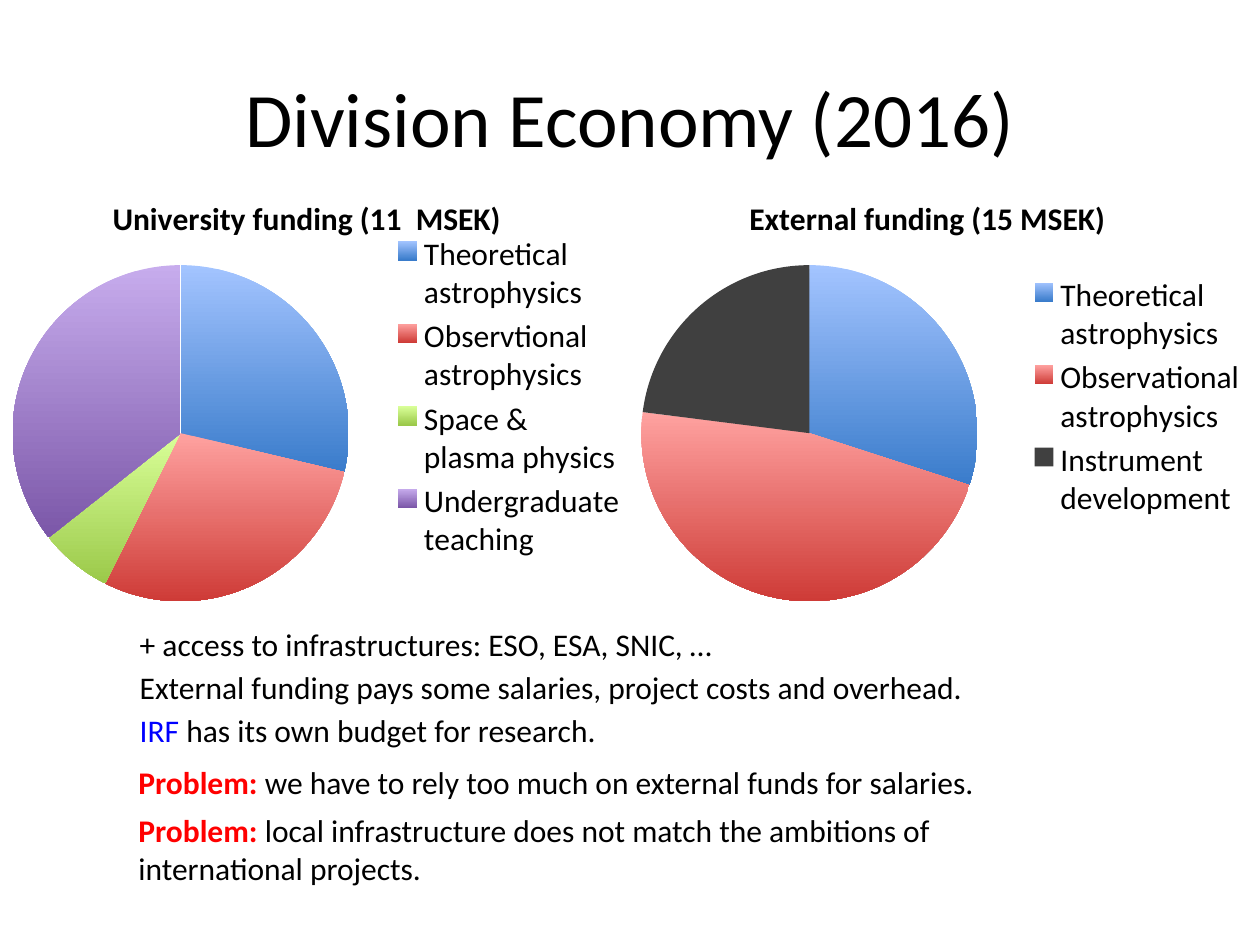
from pptx import Presentation
from pptx.chart.data import CategoryChartData
from pptx.dml.color import RGBColor
from pptx.enum.chart import XL_CHART_TYPE, XL_LEGEND_POSITION
from pptx.enum.text import MSO_ANCHOR, PP_ALIGN
from pptx.util import Inches, Pt

PIE = XL_CHART_TYPE.PIE
RIGHT = XL_LEGEND_POSITION.RIGHT
MIDDLE = MSO_ANCHOR.MIDDLE
CENTER = PP_ALIGN.CENTER

FONT = "Calibri"
BODY_SIZE = 18
COLORS = {"text": "000000", "link": "0000FF", "alert": "FF0000"}
# Each slice runs from a light top to a dark bottom
SLICES = {
    "blue": ("A3C4FF", "3A7CCB"),
    "red": ("FFA2A0", "CE3B37"),
    "green": ("D9FF98", "9BC94A"),
    "purple": ("C7ACED", "7B57A8"),
    "gray": ("404040", "404040"),
}

# Content
TITLE = "Division Economy (2016)"
CHARTS = [
    {"title": "University funding (11  MSEK)", "left": -0.21, "width": 5.29,
     "shares": [("Theoretical astrophysics", 29, "blue"),
                ("Observtional astrophysics", 29, "red"),
                ("Space & plasma physics", 7, "green"),
                ("Undergraduate teaching", 36, "purple")]},
    {"title": "External funding (15 MSEK)", "left": 4.72, "width": 5.28,
     "shares": [("Theoretical astrophysics", 30, "blue"),
                ("Observational astrophysics", 47, "red"),
                ("Instrument development", 23, "gray")]},
]
CHART_TOP, CHART_HEIGHT = 1.39, 3.52
# Runs are (text, color, bold)
NOTES = [
    [("+ access to infrastructures: ESO, ESA, SNIC, …", "text", False)],
    [("External funding pays some salaries, project costs and overhead.", "text", False)],
    [("IRF", "link", False), (" has its own budget for research.", "text", False)],
]
NOTES_TOP, NOTES_STEP = 4.91, 0.34
PROBLEMS = [
    [("Problem:", "alert", True),
     (" we have to rely too much on external funds for salaries.", "text", False)],
    [("Problem: ", "alert", True),
     ("local infrastructure does not match the ambitions of international projects.",
      "text", False)],
]


def style(font, size, color="text", bold=False):
    font.name, font.size, font.bold = FONT, Pt(size), bold
    font.color.rgb = RGBColor.from_string(COLORS[color])


def add_runs(para, runs, size=BODY_SIZE):
    for text, color, bold in runs:
        span = para.add_run()
        span.text = text
        style(span.font, size, color, bold)


def add_text(page, left, top, width, height, lines, wrap, gap=0):
    frame = page.shapes.add_textbox(
        Inches(left), Inches(top), Inches(width), Inches(height)).text_frame
    frame.word_wrap = wrap
    for index, runs in enumerate(lines):
        para = frame.add_paragraph() if index else frame.paragraphs[0]
        para.space_before = Pt(gap if index else 0)
        add_runs(para, runs)


def add_pie(page, title, left, width, shares):
    names, values, colors = zip(*shares)
    data = CategoryChartData()
    data.categories = names
    data.add_series(title, values)
    chart = page.shapes.add_chart(
        PIE, Inches(left), Inches(CHART_TOP), Inches(width), Inches(CHART_HEIGHT), data).chart
    style(chart.font, BODY_SIZE)
    chart.has_title = True
    add_runs(chart.chart_title.text_frame.paragraphs[0], [(title, "text", True)])
    chart.has_legend = True
    chart.legend.position = RIGHT
    chart.legend.include_in_layout = False
    style(chart.legend.font, BODY_SIZE)
    plot = chart.plots[0]
    plot.vary_by_categories = True
    for index, color in enumerate(colors):
        fill = plot.series[0].points[index].format.fill
        if color == "gray":
            fill.solid()
            fill.fore_color.rgb = RGBColor.from_string(SLICES[color][0])
            continue
        fill.gradient()
        fill.gradient_angle = 270
        for stop, shade in zip(fill.gradient_stops, SLICES[color]):
            stop.color.rgb = RGBColor.from_string(shade)


def main():
    deck = Presentation()
    deck.slide_width, deck.slide_height = Inches(10), Inches(7.5)
    page = deck.slides.add_slide(deck.slide_layouts[5])

    # Title
    box = page.shapes.title
    box.left, box.top, box.width, box.height = (Inches(n) for n in (0.5, 0.3, 9, 1.25))
    box.text_frame.vertical_anchor = MIDDLE
    para = box.text_frame.paragraphs[0]
    para.alignment = CENTER
    add_runs(para, [(TITLE, "text", False)], 44)

    # Funding pies
    for chart in CHARTS:
        add_pie(page, **chart)

    # Notes and problems below the pies
    for row, runs in enumerate(NOTES):
        add_text(page, 1.01, NOTES_TOP + row * NOTES_STEP, 6.82, 0.4, [runs], False)
    add_text(page, 1, 6.01, 7.59, 1.09, PROBLEMS, True, gap=5.5)

    deck.save("out.pptx")


if __name__ == "__main__":
    main()
